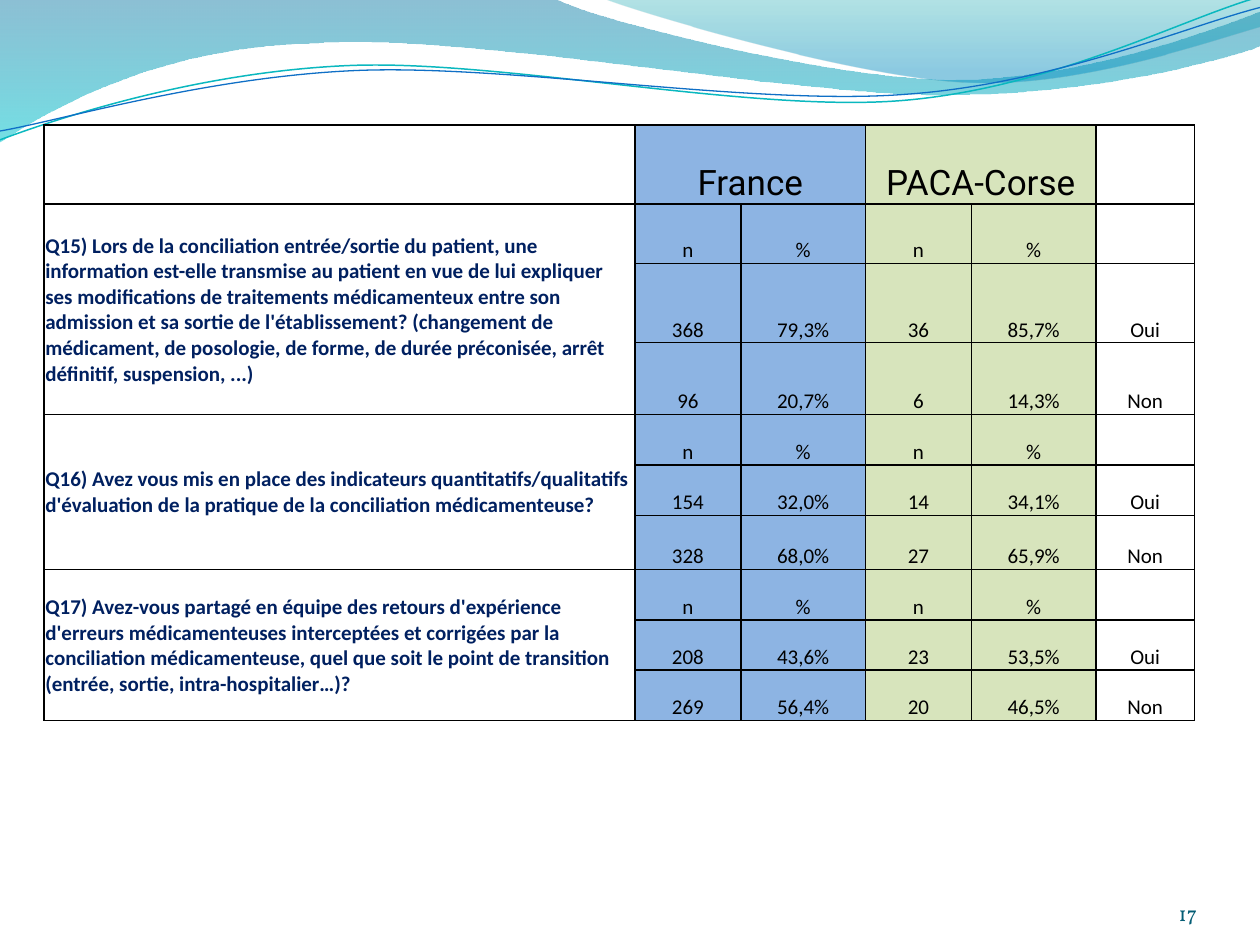
import math

import pptx
import pptx.dml.color
import pptx.enum.text
import pptx.oxml.ns
import pptx.util
from lxml import etree

Inches = pptx.util.Inches
Pt = pptx.util.Pt
Align = pptx.enum.text.PP_ALIGN
Anchor = pptx.enum.text.MSO_ANCHOR
qn = pptx.oxml.ns.qn

COLORS = {
    "white": "FFFFFF", "black": "000000", "question": "002060",
    "france": "8DB4E3", "paca": "D7E4BC", "number": "045D75",
    "deep_blue": "0074A1", "turquoise": "00C6CF",
    "teal": "00A1A9", "sky": "008BBF",
    "teal_line": "0AB8BF", "blue_line": "0F6FC6",
}
CURVE_TILT = -2.7
COLUMN_WIDTHS = [4.69, 0.84, 0.99, 0.84, 0.99, 0.78]
ROW_HEIGHTS = [0.63, 0.47, 0.63, 0.57, 0.4, 0.4, 0.43, 0.4, 0.4, 0.4]
COLUMN_FILLS = ["white", "france", "france", "paca", "paca", "white"]
UNITS = ["n", "%", "n", "%", ""]
QUESTIONS = [
    ("Q15) Lors de la conciliation entrée/sortie du patient, une information est-elle "
     "transmise au patient en vue de lui expliquer ses modifications de traitements "
     "médicamenteux entre son admission et sa sortie de l'établissement? (changement de "
     "médicament, de posologie, de forme, de durée préconisée, arrêt définitif, "
     "suspension, ...)",
     ["368", "79,3%", "36", "85,7%", "Oui"],
     ["96", "20,7%", "6", "14,3%", "Non"]),
    ("Q16) Avez vous mis en place des indicateurs quantitatifs/qualitatifs d'évaluation "
     "de la pratique de la conciliation médicamenteuse?",
     ["154", "32,0%", "14", "34,1%", "Oui"],
     ["328", "68,0%", "27", "65,9%", "Non"]),
    ("Q17) Avez-vous partagé en équipe des retours d'expérience d'erreurs "
     "médicamenteuses interceptées et corrigées par la conciliation médicamenteuse, "
     "quel que soit le point de transition (entrée, sortie, intra-hospitalier…)?",
     ["208", "43,6%", "23", "53,5%", "Oui"],
     ["269", "56,4%", "20", "46,5%", "Non"]),
]
WIDE_WAVE = [
    [(0, 0)], [(4.4, -0.01)],
    [(4.76, 0.17), (6.64, 0.63), (7.58, 0.63)],
    [(8.53, 0.63), (9.58, 0.26), (10, 0.09)],
    [(10.01, 0.36)],
    [(9.83, 0.44), (8.7, 0.76), (7.46, 0.75)],
    [(6.22, 0.75), (3.82, 0.28), (2.57, 0.34)],
    [(1.29, 0.36), (0.46, 0.83), (-0.01, 1.13)],
    [(0, 0)],
]
RIGHT_WAVE = [
    [(4.79, -0.01)],
    [(5.09, 0.11), (6.82, 0.62), (7.69, 0.65)],
    [(8.56, 0.69), (9.61, 0.32), (10, 0.21)],
    [(10, 0)], [(4.79, -0.01)],
]
TEAL_CURVE = [
    [(0, 1.11)],
    [(0.48, 0.93), (1.58, 0.57), (2.77, 0.52)],
    [(3.95, 0.47), (5.93, 0.89), (7.13, 0.8)],
    [(8.33, 0.71), (9.38, 0.15), (9.98, -0.02)],
]
BLUE_CURVE = [
    [(0, 1.04)],
    [(0.47, 0.96), (1.64, 0.61), (2.83, 0.56)],
    [(4.03, 0.51), (5.97, 0.84), (7.17, 0.75)],
    [(8.36, 0.67), (9.41, 0.21), (10, 0.06)],
]


def rgb(name):
    return pptx.dml.color.RGBColor.from_string(COLORS[name])


def turn(point, center, degrees):
    angle = math.radians(degrees)
    dx, dy = point[0] - center[0], point[1] - center[1]
    return (center[0] + dx * math.cos(angle) - dy * math.sin(angle),
            center[1] + dx * math.sin(angle) + dy * math.cos(angle))


def add_outline(slide, outline, close):
    (start,), *segments = outline
    builder = slide.shapes.build_freeform(Inches(start[0]), Inches(start[1]))
    points = [(Inches(x), Inches(y)) for segment in segments for x, y in segment]
    builder.add_line_segments(points, close=close)
    shape = builder.convert_to_shape()
    shape.shadow.inherit = False
    steps = iter(list(shape._element.iter(qn("a:lnTo"))))
    for segment in segments:
        first, *others = [next(steps) for _ in segment]
        if others:
            first.addprevious(bend := etree.Element(qn("a:cubicBezTo")))
            for step in (first, *others):
                bend.append(step[0])
                step.getparent().remove(step)
    return shape


def add_wave(slide, outline, stops):
    wave = add_outline(slide, outline, True)
    wave.line.fill.background()
    wave.fill.gradient()
    wave.fill.gradient_angle = 270
    for stop, (position, color, opacity) in zip(wave.fill.gradient_stops, stops):
        stop.position = position
        stop.color.rgb = rgb(color)
    tints = wave.fill._xPr.iter(qn("a:srgbClr"))
    for tint, (position, color, opacity) in zip(tints, stops):
        etree.SubElement(tint, qn("a:alpha"), val=str(opacity * 1000))


def add_curve(slide, outline, center, color, width):
    level = [[turn(point, center, -CURVE_TILT) for point in segment] for segment in outline]
    curve = add_outline(slide, level, False)
    curve.rotation = CURVE_TILT
    curve.fill.background()
    curve.line.color.rgb = rgb(color)
    curve.line.width = Pt(width)


def style_text(frame, align, size, font, color, bold=False):
    paragraph = frame.paragraphs[0]
    paragraph.alignment = align
    for run in paragraph.runs:
        run.font.size = Pt(size)
        run.font.name = font
        run.font.bold = bold
        run.font.color.rgb = rgb(color)


def add_borders(cell):
    properties = cell._tc.get_or_add_tcPr()
    for index, side in enumerate(("lnL", "lnR", "lnT", "lnB")):
        border = etree.Element(qn("a:" + side), w=str(Pt(1)))
        fill = etree.SubElement(border, qn("a:solidFill"))
        etree.SubElement(fill, qn("a:srgbClr"), val=COLORS["black"])
        properties.insert(index, border)


def fill_cell(cell, text, fill, **style):
    cell.fill.solid()
    cell.fill.fore_color.rgb = rgb(fill)
    cell.margin_left = cell.margin_right = cell.margin_top = Inches(0.01)
    cell.margin_bottom = 0
    cell.vertical_anchor = Anchor.MIDDLE if style.get("bold") else Anchor.BOTTOM
    add_borders(cell)
    if text:
        cell.text_frame.text = text
        style_text(cell.text_frame, **style)


def add_results(slide):
    rows = [["", "France", "", "PACA-Corse", "", ""]]
    for question, yes, no in QUESTIONS:
        rows += [[question, *UNITS], ["", *yes], ["", *no]]
    table = slide.shapes.add_table(
        len(rows), len(COLUMN_WIDTHS), Inches(0.35), Inches(0.99),
        Inches(sum(COLUMN_WIDTHS)), Inches(sum(ROW_HEIGHTS))).table
    table.first_row = table.horz_banding = False
    for column, width in zip(table.columns, COLUMN_WIDTHS):
        column.width = Inches(width)
    for row, height in zip(table.rows, ROW_HEIGHTS):
        row.height = Inches(height)

    heading = dict(align=Align.CENTER, size=20, font="Roboto", color="black")
    question_style = dict(align=Align.LEFT, size=12, font="Calibri", color="question", bold=True)
    answer = dict(align=Align.CENTER, size=12, font="Calibri", color="black")
    for r, row in enumerate(rows):
        for c, text in enumerate(row):
            style = heading if r == 0 else question_style if c == 0 else answer
            fill_cell(table.cell(r, c), text, COLUMN_FILLS[c], **style)
    for c in (1, 3):
        table.cell(0, c).merge(table.cell(0, c + 1))
    for r in range(1, len(rows), 3):
        table.cell(r, 0).merge(table.cell(r + 2, 0))


def add_page_number(slide):
    frame = slide.shapes.add_textbox(
        Inches(8.67), Inches(6.95), Inches(0.83), Inches(0.4)).text_frame
    frame.word_wrap = True
    frame.margin_left = frame.margin_right = frame.margin_top = frame.margin_bottom = 0
    frame.vertical_anchor = Anchor.BOTTOM
    frame.text = "17"
    style_text(frame, Align.RIGHT, 12, "Vollkorn", "number")


def main():
    deck = pptx.Presentation()
    deck.slide_width, deck.slide_height = Inches(10), Inches(7.5)
    slide = deck.slides.add_slide(deck.slide_layouts[6])
    add_wave(slide, WIDE_WAVE, [(0, "deep_blue", 45), (1, "turquoise", 55)])
    add_wave(slide, RIGHT_WAVE, [(0, "teal", 30), (0.8, "sky", 45)])
    add_curve(slide, TEAL_CURVE, (4.99, 0.58), "teal_line", 0.85)
    add_curve(slide, BLUE_CURVE, (5, 0.59), "blue_line", 0.75)
    add_results(slide)
    add_page_number(slide)
    deck.save("out.pptx")


if __name__ == "__main__":
    main()
